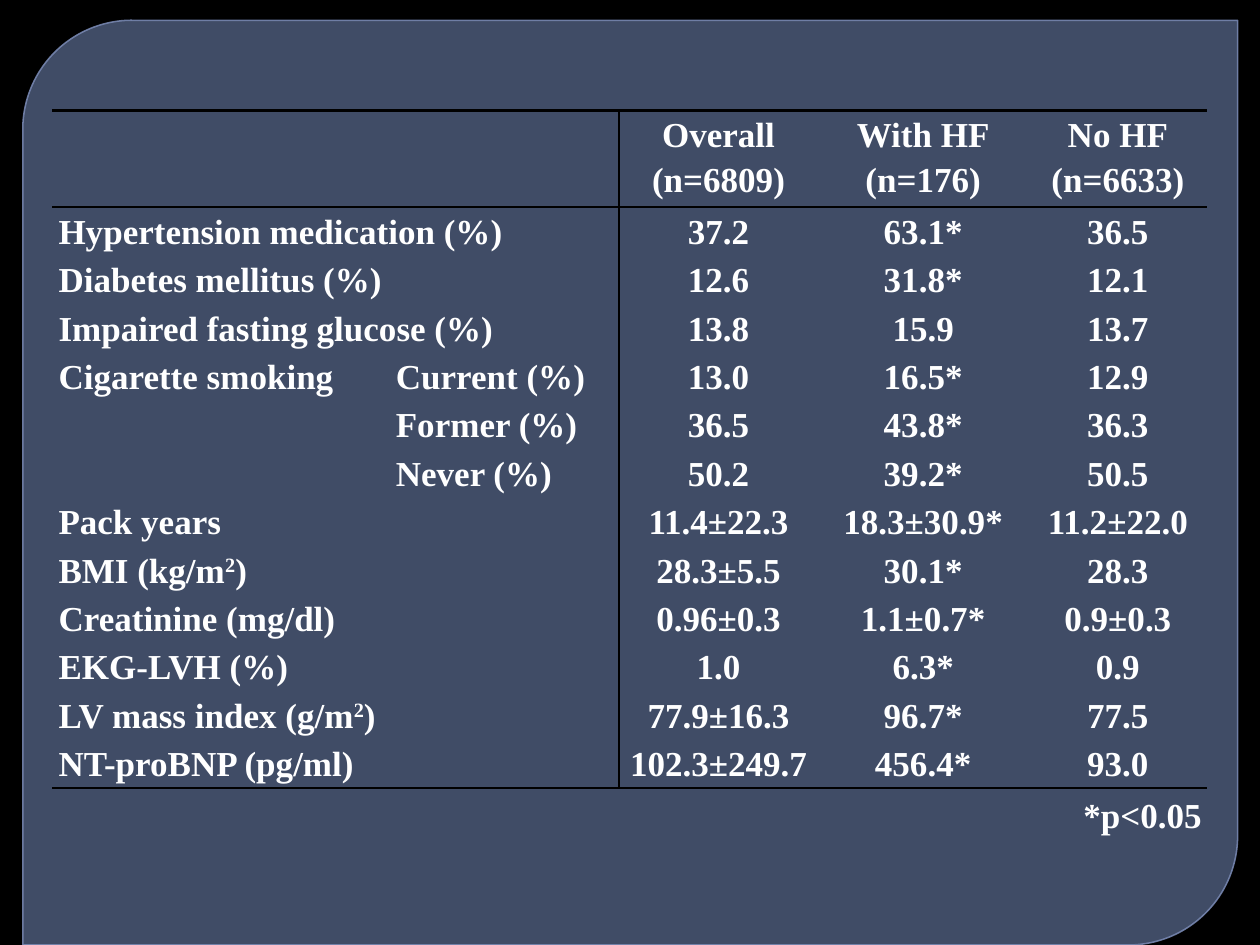
import pptx
import pptx.dml.color
import pptx.enum.shapes
import pptx.enum.text
import pptx.oxml
import pptx.oxml.ns
import pptx.util
from pptx.util import Cm

FONT = "Times New Roman"
WHITE = "FFFFFF"
BLACK = "000000"
SUBLABEL_INDENT = Cm(6.8)
COLUMN_WIDTHS = (11.43, 4.01, 4.24, 3.61)
HEADER_HEIGHT = 1.95
ROW_HEIGHT = 0.975
ROWS = (
    ("", "Overall\n(n=6809)", "With HF\n(n=176)", "No HF\n(n=6633)"),
    ("Hypertension medication (%)", "37.2", "63.1*", "36.5"),
    ("Diabetes mellitus (%)", "12.6", "31.8*", "12.1"),
    ("Impaired fasting glucose (%)", "13.8", "15.9", "13.7"),
    ("Cigarette smoking\tCurrent (%)", "13.0", "16.5*", "12.9"),
    ("Former (%)", "36.5", "43.8*", "36.3"),
    ("Never (%)", "50.2", "39.2*", "50.5"),
    ("Pack years", "11.4±22.3", "18.3±30.9*", "11.2±22.0"),
    ("BMI (kg/m^2^)", "28.3±5.5", "30.1*", "28.3"),
    ("Creatinine (mg/dl)", "0.96±0.3", "1.1±0.7*", "0.9±0.3"),
    ("EKG-LVH (%)", "1.0", "6.3*", "0.9"),
    ("LV mass index (g/m^2^)", "77.9±16.3", "96.7*", "77.5"),
    ("NT-proBNP (pg/ml)", "102.3±249.7", "456.4*", "93.0"),
)
SUBLABELS = ("Former (%)", "Never (%)")


def rgb(value):
    return pptx.dml.color.RGBColor.from_string(value)


def set_alpha(fill, percent):
    color = fill._xPr.find(".//" + pptx.oxml.ns.qn("a:srgbClr"))
    alpha = pptx.oxml.parse_xml(
        f'<a:alpha {pptx.oxml.ns.nsdecls("a")} val="{percent * 1000}"/>')
    color.append(alpha)


def add_panel(s):
    sp = s.shapes.add_shape(
        pptx.enum.shapes.MSO_SHAPE.ROUND_2_DIAG_RECTANGLE,
        Cm(0.46), Cm(0.41), Cm(24.49), Cm(18.64))
    sp.adjustments[0] = 0.118
    sp.adjustments[1] = 0
    sp.shadow.inherit = False
    sp.fill.solid()
    sp.fill.fore_color.rgb = rgb("63759D")
    set_alpha(sp.fill, 65)
    sp.line.color.rgb = rgb("7989B3")
    sp.line.width = pptx.util.Pt(0.87)
    set_alpha(sp.line.fill, 88)


def add_run(p, text, superscript=False):
    r = p.add_run()
    r.text = text
    r.font.name = FONT
    r.font.size = pptx.util.Pt(20)
    r.font.bold = True
    r.font.color.rgb = rgb(WHITE)
    if superscript:
        r.font._element.set("baseline", "30000")


def add_tab_stop(p, position):
    p._p.get_or_add_pPr().append(pptx.oxml.parse_xml(
        f'<a:tabLst {pptx.oxml.ns.nsdecls("a")}>'
        f'<a:tab pos="{position}" algn="l"/></a:tabLst>'))


def fill_cell(cell, text, alignment):
    cell.margin_left = cell.margin_right = Cm(0.13)
    cell.margin_top = cell.margin_bottom = 0
    cell.fill.background()
    tf = cell.text_frame
    for i, line in enumerate(text.split("\n")):
        p = tf.add_paragraph() if i else tf.paragraphs[0]
        p.alignment = alignment
        p.line_spacing = 1.15
        if "\t" in line:
            add_tab_stop(p, SUBLABEL_INDENT)
        if line in SUBLABELS:
            p._p.get_or_add_pPr().set("marL", str(SUBLABEL_INDENT))
        for j, part in enumerate(line.split("^")):
            if part:
                add_run(p, part, superscript=j % 2 == 1)


def set_borders(cell, visible):
    tcPr = cell._tc.get_or_add_tcPr()
    for i, side in enumerate("LRTB"):
        paint = (f'<a:solidFill><a:srgbClr val="{BLACK}"/></a:solidFill>'
                 if side in visible else "<a:noFill/>")
        tcPr.insert(i, pptx.oxml.parse_xml(
            f'<a:ln{side} {pptx.oxml.ns.nsdecls("a")} w="19050">'
            f'{paint}</a:ln{side}>'))


def add_results_table(s):
    last = len(ROWS) - 1
    height = HEADER_HEIGHT + last * ROW_HEIGHT
    table = s.shapes.add_table(
        len(ROWS), len(COLUMN_WIDTHS), Cm(1.05), Cm(2.23),
        Cm(sum(COLUMN_WIDTHS)), Cm(height)).table
    table.first_row = False
    table.horz_banding = False
    for column, width in zip(table.columns, COLUMN_WIDTHS):
        column.width = Cm(width)
    align = pptx.enum.text.PP_ALIGN
    for i, values in enumerate(ROWS):
        table.rows[i].height = Cm(ROW_HEIGHT if i else HEADER_HEIGHT)
        for j, text in enumerate(values):
            cell = table.cell(i, j)
            fill_cell(cell, text, align.CENTER if j else align.LEFT)
            visible = {0: "R", 1: "L"}.get(j, "")
            visible += "T" if i <= 1 else ""
            visible += "B" if i in (0, last) else ""
            set_borders(cell, visible)


def add_footnote(s):
    tf = s.shapes.add_textbox(
        Cm(21.59), Cm(15.88), Cm(3.6), Cm(1.11)).text_frame
    tf.word_wrap = True
    add_run(tf.paragraphs[0], "*p<0.05")


def main():
    prs = pptx.Presentation()
    prs.slide_width = Cm(25.4)
    prs.slide_height = Cm(19.05)
    s = prs.slides.add_slide(prs.slide_layouts[6])
    s.background.fill.solid()
    s.background.fill.fore_color.rgb = rgb(BLACK)
    add_panel(s)
    add_results_table(s)
    add_footnote(s)
    prs.save("out.pptx")


if __name__ == "__main__":
    main()
